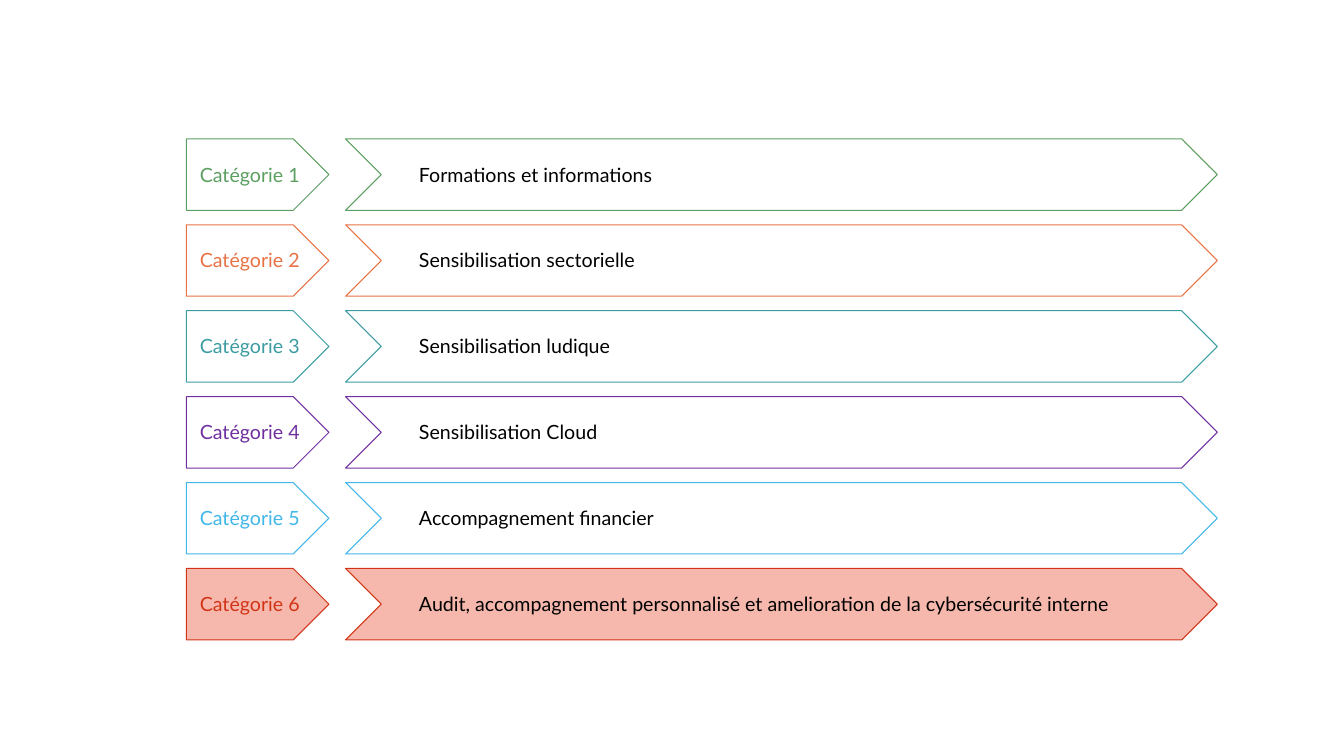
"""Build a slide listing six service categories as arrow rows."""
from pptx import Presentation
from pptx.dml.color import RGBColor
from pptx.enum.shapes import MSO_SHAPE
from pptx.enum.text import MSO_AUTO_SIZE, PP_ALIGN
from pptx.util import Cm, Pt

CATEGORIES = [
    ("Formations et informations", "5B9F61", None),
    ("Sensibilisation sectorielle", "E87244", None),
    ("Sensibilisation ludique", "3B9CA2", None),
    ("Sensibilisation Cloud", "7030A0", None),
    ("Accompagnement financier", "41B7EA", None),
    ("Audit, accompagnement personnalisé et amelioration de la cybersécurité interne",
     "D23417", "F6B8AC"),
]
FIRST_TOP = 3.5
ROW_PITCH = 2.165
ARROW_HEIGHT = 1.8
TEXT_HEIGHT = 0.86


def color(value):
    return RGBColor.from_string(value)


def write(text_frame, text, *, font, size, text_color, align=PP_ALIGN.LEFT):
    paragraph = text_frame.paragraphs[0]
    paragraph.alignment = align
    run = paragraph.add_run()
    run.text = text
    run.font.name = font
    run.font.size = Pt(size)
    run.font.color.rgb = color(text_color)


class SlideBuilder:
    font = "Lato"
    size = 14
    line_width = 0.75

    def __init__(self, slide):
        self.slide = slide

    def arrow(self, preset, left, top, width, line, fill=None):
        shape = self.slide.shapes.add_shape(
            preset, Cm(left), Cm(top), Cm(width), Cm(ARROW_HEIGHT))
        shape.shadow.inherit = False
        shape.line.color.rgb = color(line)
        shape.line.width = Pt(self.line_width)
        if fill:
            shape.fill.solid()
            shape.fill.fore_color.rgb = color(fill)
        else:
            shape.fill.background()

    def label(self, text, left, top, width, text_color, align=PP_ALIGN.LEFT):
        box = self.slide.shapes.add_textbox(
            Cm(left), Cm(top), Cm(width), Cm(TEXT_HEIGHT))
        box.text_frame.word_wrap = True
        box.text_frame.auto_size = MSO_AUTO_SIZE.SHAPE_TO_FIT_TEXT
        write(box.text_frame, text, font=self.font, size=self.size,
              text_color=text_color, align=align)


def main():
    presentation = Presentation()
    presentation.slide_width = Cm(33.87)
    presentation.slide_height = Cm(19.05)
    builder = SlideBuilder(presentation.slides.add_slide(presentation.slide_layouts[6]))

    for index, (description, accent, fill) in enumerate(CATEGORIES):
        top = FIRST_TOP + index * ROW_PITCH
        text_top = top + (ARROW_HEIGHT - TEXT_HEIGHT) / 2
        builder.arrow(MSO_SHAPE.PENTAGON, 4.7, top, 3.59, accent, fill)
        builder.arrow(MSO_SHAPE.CHEVRON, 8.71, top, 21.97, accent, fill)
        builder.label(f"Catégorie {index + 1}", 3.07, text_top, 6.45, accent,
                      PP_ALIGN.CENTER)
        description_width = 19.3 if fill else 13.92
        builder.label(description, 10.31, text_top, description_width, "000000")

    presentation.save("out.pptx")


if __name__ == "__main__":
    main()
